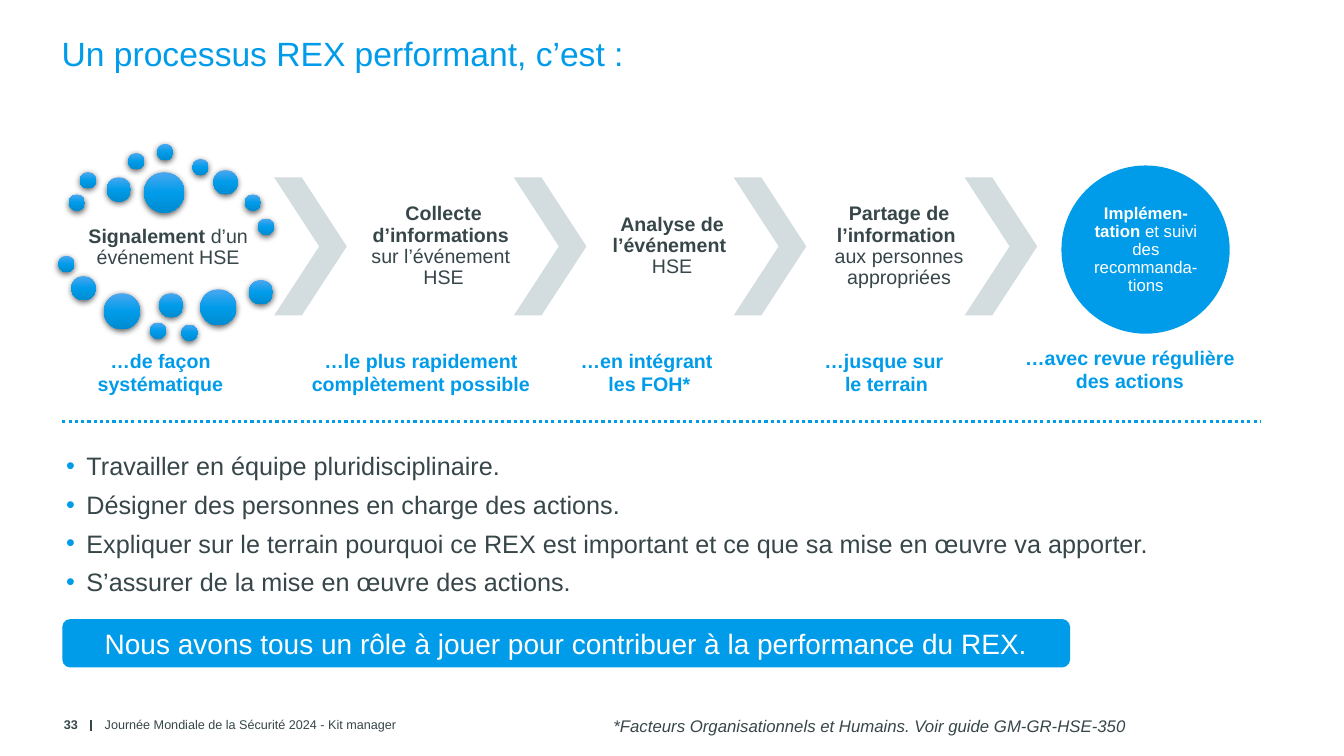
from pptx import Presentation, oxml, util as u
from pptx.dml import color
from pptx.enum import shapes, text

HUE = {"blue": "009CEA", "light": "4BA7F0", "deep": "008BD0",
       "dark": "374649", "gray": "D3DCDE", "white": "FFFFFF"}
NS = 'xmlns:a="http://schemas.openxmlformats.org/drawingml/2006/main"'

TITLE = "Un processus REX performant, c’est :"
DOTS = {
    0.41: [(1.73, 4.9), (2.01, 4.34), (3.23, 3.86), (3.96, 3.63), (4.85, 4.01),
           (6.17, 4.9), (6.5, 5.51), (1.47, 6.45), (3.78, 8.13), (4.57, 8.18)],
    0.61: [(2.69, 4.47), (5.38, 4.29), (1.8, 6.96), (4.01, 7.39), (6.27, 7.06)],
    0.91: [(2.62, 7.39), (5.05, 7.29)],
    1.02: [(3.63, 4.34)],
}
ARROWS = [6.91, 12.95, 18.49, 24.31]
STEPS = [
    (1.75, 5.41, 1.65, [[("Signalement ", True), ("d’un événement HSE", False)]]),
    (8.69, 4.47, 3.48, [[("Collecte d’informations ", True)],
                        [("sur l’événement ", False)], [("HSE", False)]]),
    (14.45, 4.47, 3.48, [[("Analyse de l’événement ", True)], [("HSE", False)]]),
    (20.17, 4.47, 3.48, [[("Partage de l’information ", True)],
                         [("aux personnes appropriées", False)]]),
]
LAST = [[("Implémen- tation ", True), ("et suivi des recommanda-tions", False)]]
NOTES = [
    (1.3, 8.66, 5.49, ["…de façon systématique"]),
    (7.32, 8.66, 6.58, ["…le plus rapidement complètement possible"]),
    (13.34, 8.66, 6.05, ["…en intégrant ", "les FOH*"]),
    (19.25, 8.66, 6.05, ["…jusque sur", " le terrain"]),
    (25.45, 8.59, 6.05, ["…avec revue régulière des actions"]),
]
POINTS = [
    "Travailler en équipe pluridisciplinaire.",
    "Désigner des personnes en charge des actions.",
    "Expliquer sur le terrain pourquoi ce REX est important et ce que sa mise en œuvre va apporter.",
    "S’assurer de la mise en œuvre des actions.",
]
CLAIM = "Nous avons tous un rôle à jouer pour contribuer à la performance du REX."
FOOT = "Journée Mondiale de la Sécurité 2024 - Kit manager"
PAGE = "33"
REF = "*Facteurs Organisationnels et Humains. Voir guide GM-GR-HSE-350"

deck = Presentation()
deck.slide_width, deck.slide_height = u.Cm(33.87), u.Cm(19.05)
slide = deck.slides.add_slide(deck.slide_layouts[5])
items = slide.shapes


def rgb(name):
    return color.RGBColor.from_string(HUE[name])


def cm(*nums):
    return [u.Cm(n) for n in nums]


def write(shape, paras, size=14, hue="dark", bold=False, italic=False,
          align="LEFT", anchor="TOP", wrap=True, inset=None,
          lead=None, after=None, bullet=False):
    frame = shape.text_frame
    frame.word_wrap = wrap
    frame.vertical_anchor = text.MSO_ANCHOR[anchor]
    if inset is not None:
        frame.margin_left = frame.margin_right = u.Cm(inset)
        frame.margin_top = frame.margin_bottom = u.Cm(inset)
    for i, para in enumerate(paras):
        p = frame.paragraphs[0] if i == 0 else frame.add_paragraph()
        p.alignment = text.PP_ALIGN[align]
        if lead:
            p.line_spacing = lead
        if after:
            p.space_after = u.Pt(after)
        if bullet:
            props = p._p.get_or_add_pPr()
            props.set("marL", str(u.Cm(0.51)))
            props.set("indent", str(-u.Cm(0.51)))
            for tag in (f'<a:buClr {NS}><a:srgbClr val="{HUE["blue"]}"/></a:buClr>',
                        f'<a:buFont {NS} typeface="Arial"/>',
                        f'<a:buChar {NS} char="•"/>'):
                props.append(oxml.parse_xml(tag))
        for words, strong in [(para, bold)] if isinstance(para, str) else para:
            run = p.add_run()
            run.text = words
            font = run.font
            font.name, font.size = "Arial", u.Pt(size)
            font.bold, font.italic = strong, italic
            font.color.rgb = rgb(hue)


def box(x, y, w, h, paras, **form):
    write(items.add_textbox(*cm(x, y, w, h)), paras, **form)


def draw(kind, x, y, w, h, hue="blue"):
    shape = items.add_shape(shapes.MSO_SHAPE[kind], *cm(x, y, w, h))
    shape.shadow.inherit = False
    shape.line.fill.background()
    if hue:
        shape.fill.solid()
        shape.fill.fore_color.rgb = rgb(hue)
    return shape


def dot(x, y, d):
    props = draw("OVAL", x, y, d, d, None)._element.spPr
    stops = "".join(f'<a:gs pos="{pos}"><a:srgbClr val="{HUE[hue]}"/></a:gs>'
                    for pos, hue in ((0, "light"), (50000, "blue"), (100000, "deep")))
    props.insert(2, oxml.parse_xml(
        f'<a:gradFill {NS} rotWithShape="1"><a:gsLst>{stops}</a:gsLst>'
        '<a:lin ang="5400000" scaled="0"/></a:gradFill>'))
    props[-1].append(oxml.parse_xml(
        f'<a:outerShdw {NS} blurRad="57150" dist="19050" dir="5400000" '
        'algn="ctr" rotWithShape="0"><a:srgbClr val="000000">'
        '<a:alpha val="63000"/></a:srgbClr></a:outerShdw>'))


def rule(x, y, far, low, hue, width):
    line = items.add_connector(shapes.MSO_CONNECTOR.STRAIGHT, *cm(x, y, far, low))
    line.line.color.rgb = rgb(hue)
    line.line.width = u.Pt(width)
    line._element.spPr.append(oxml.parse_xml(f"<a:effectLst {NS}/>"))
    return line


head = items.title
head.left, head.top, head.width, head.height = cm(1.3, 0.69, 27, 2.79)
write(head, [TITLE], size=24, hue="blue")

for d, spots in DOTS.items():
    for x, y in spots:
        dot(x, y, d)
for x in ARROWS:
    draw("CHEVRON", x, 4.47, 1.83, 3.48, "gray").adjustments[0] = 0.62
for x, y, h, paras in STEPS:
    box(x, y, 4.98, h, paras, align="CENTER", anchor="MIDDLE", inset=0.05, lead=0.9)
draw("OVAL", 26.75, 4.17, 4.24, 4.24)
box(27.38, 4.8, 3, 3, LAST, size=12, hue="white", align="CENTER",
    anchor="MIDDLE", inset=0, lead=0.9)
for x, y, w, paras in NOTES:
    box(x, y, w, 1.6, paras, hue="blue", bold=True, align="CENTER")

rule(1.57, 10.62, 31.75, 10.62, "blue", 2.25).line.dash_style = 3
box(1.42, 11.23, 32.4, 4.2, POINTS, size=18, after=6, bullet=True)
write(draw("ROUNDED_RECTANGLE", 1.57, 15.6, 25.4, 1.22), [CLAIM], size=20,
      hue="white", align="CENTER", anchor="MIDDLE")

rule(2.29, 18.14, 2.29, 18.42, "dark", 1)
box(2.39, 17.91, 10, 0.71, [FOOT], size=9, anchor="MIDDLE")
box(0.61, 17.91, 1.6, 0.71, [PAGE], size=9, bold=True, align="RIGHT", anchor="MIDDLE")
box(15.21, 17.91, 13.54, 0.76, [REF], size=12, italic=True, wrap=False)

deck.save("out.pptx")
